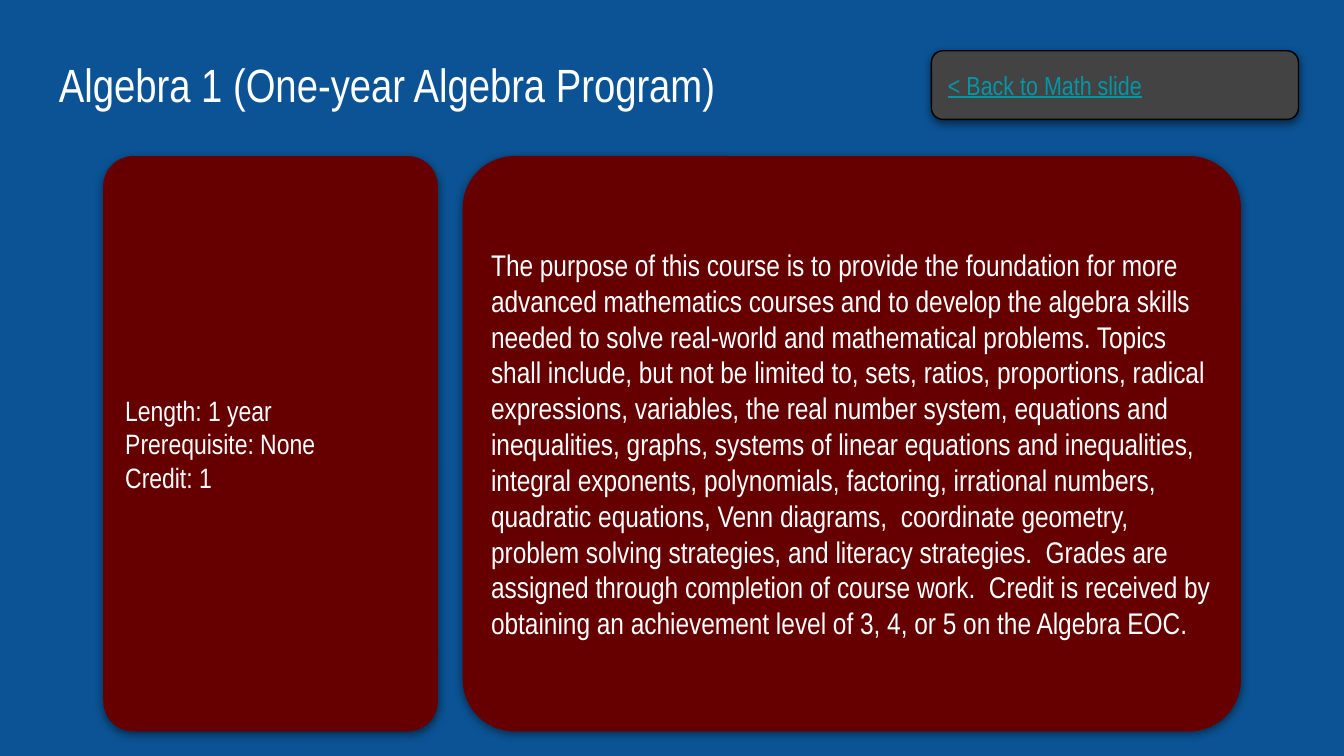
from lxml.etree import SubElement
from pptx import Presentation
from pptx.dml.color import RGBColor
from pptx.enum.shapes import MSO_SHAPE
from pptx.enum.text import MSO_ANCHOR, PP_ALIGN
from pptx.oxml.ns import qn
from pptx.util import Pt

FONT = "Arial Narrow"
MAROON = "660000"
WHITE = "FFFFFF"

DESCRIPTION = (
    "The purpose of this course is to provide the foundation for more advanced "
    "mathematics courses and to develop the algebra skills needed to solve "
    "real-world and mathematical problems. Topics shall include, but not be "
    "limited to, sets, ratios, proportions, radical expressions, variables, the "
    "real number system, equations and inequalities, graphs, systems of linear "
    "equations and inequalities, integral exponents, polynomials, factoring, "
    "irrational numbers, quadratic equations, Venn diagrams,  coordinate geometry, "
    "problem solving strategies, and literacy strategies.  Grades are assigned "
    "through completion of course work.  Credit is received by obtaining an "
    "achievement level of 3, 4, or 5 on the Algebra EOC."
)


def rgb(color):
    return RGBColor.from_string(color)


def write(sp, lines, size, color, anchor, underline=None):
    """Fill a shape with left-aligned paragraphs and equal insets."""
    tf = sp.text_frame
    tf.word_wrap = True
    tf.vertical_anchor = anchor
    tf.margin_left = tf.margin_right = tf.margin_top = tf.margin_bottom = Pt(7.2)
    tf.text = "\n".join(lines)
    for p in tf.paragraphs:
        p.alignment = PP_ALIGN.LEFT
        p.font.name = FONT
        p.font.size = Pt(size)
        p.font.color.rgb = rgb(color)
        p.font.underline = underline


prs = Presentation()
prs.slide_width, prs.slide_height = Pt(720), Pt(405)
s = prs.slides.add_slide(prs.slide_layouts[6])
s.background.fill.solid()
s.background.fill.fore_color.rgb = rgb("0B5394")

title = s.shapes.add_textbox(Pt(24.5), Pt(23), Pt(671), Pt(45.4))
write(title, ["Algebra 1 (One-year Algebra Program)"], 25, WHITE, MSO_ANCHOR.TOP)

# left, top, width, height, corner, fill, outline, lines, size, color, underline
cards = [
    (499, 27.2, 196.6, 36.8, 0.167, "434343", "000000",
     ["< Back to Math slide"], 14, "0097A7", True),
    (55.3, 83.6, 179.3, 308.2, 0.09, MAROON, None,
     ["Length: 1 year", "Prerequisite: None", "Credit: 1"], 15, WHITE, None),
    (247.9, 83.6, 416.9, 308.2, 0.09, MAROON, None,
     [DESCRIPTION], 16, WHITE, None),
]
for left, top, width, height, corner, fill, outline, lines, size, color, underline in cards:
    sp = s.shapes.add_shape(MSO_SHAPE.ROUNDED_RECTANGLE,
                            Pt(left), Pt(top), Pt(width), Pt(height))
    sp.adjustments[0] = corner
    sp.fill.solid()
    sp.fill.fore_color.rgb = rgb(fill)
    if outline:
        sp.line.color.rgb = rgb(outline)
        sp.line.width = Pt(0.75)
    else:
        sp.line.fill.background()
    write(sp, lines, size, color, MSO_ANCHOR.MIDDLE, underline)

    # Soft black shadow straight below, half transparent
    sp.shadow.inherit = False
    effects = sp._element.spPr.find(qn("a:effectLst"))
    shadow = SubElement(effects, qn("a:outerShdw"), blurRad=str(Pt(4.5)),
                        dist=str(Pt(1.5)), dir="5400000", algn="bl", rotWithShape="0")
    black = SubElement(shadow, qn("a:srgbClr"), val="000000")
    SubElement(black, qn("a:alpha"), val="50000")

prs.save("out.pptx")
